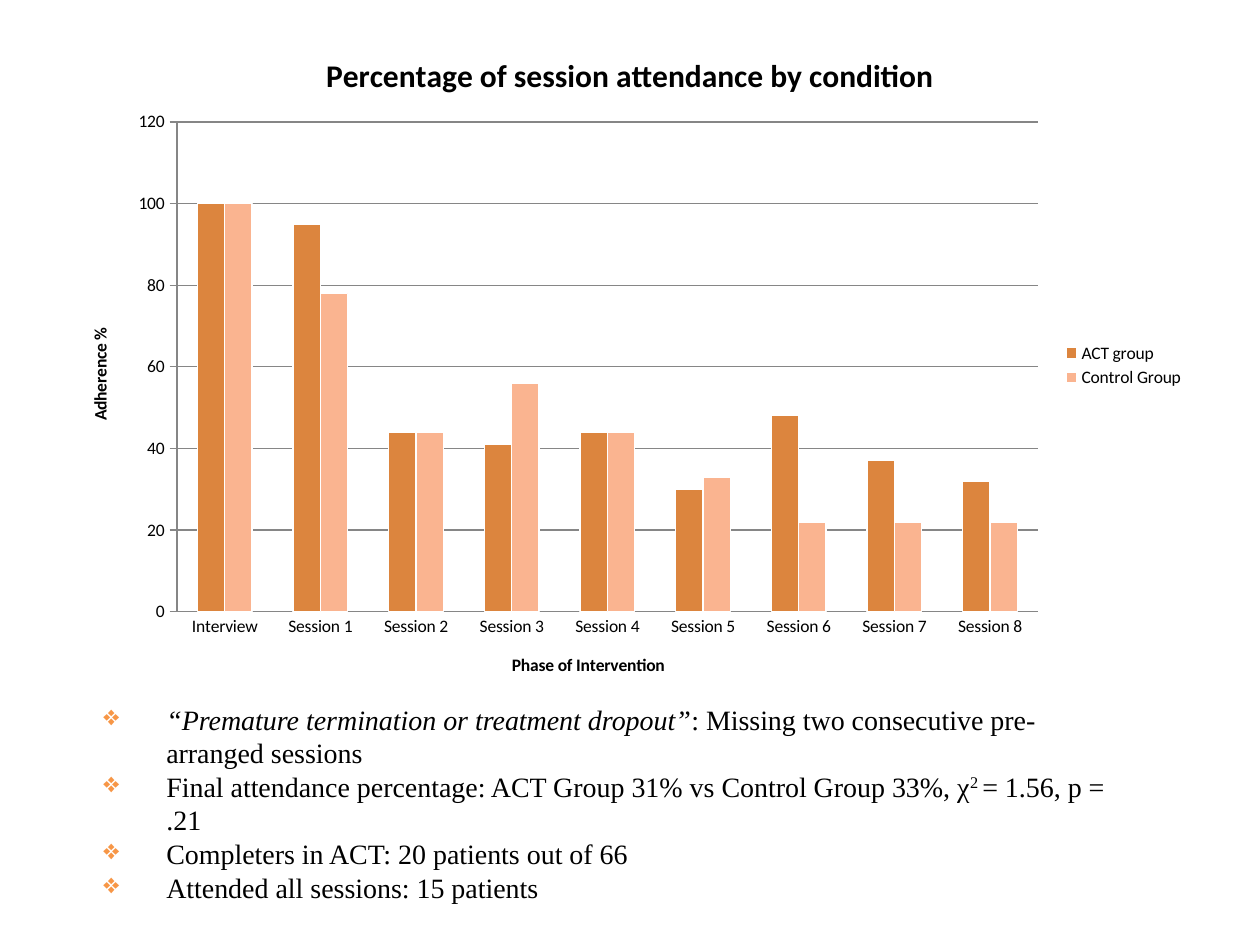
from lxml.etree import SubElement
from pptx import Presentation
from pptx.chart.data import CategoryChartData
from pptx.dml.color import RGBColor
from pptx.enum.chart import XL_CHART_TYPE, XL_LEGEND_POSITION, XL_TICK_MARK
from pptx.oxml import parse_xml
from pptx.oxml.ns import nsdecls, qn
from pptx.util import Pt

SCALE = 914400 / 126  # EMU per px
BLACK = RGBColor(0, 0, 0)
WHITE = RGBColor(255, 255, 255)
GREY = RGBColor(0x86, 0x86, 0x86)
ORANGE = RGBColor(0xDC, 0x85, 0x3E)
PEACH = RGBColor(0xFA, 0xB4, 0x90)
MARK = RGBColor(0xF7, 0x96, 0x46)

PHASES = ["Interview"] + [f"Session {n}" for n in range(1, 9)]
GROUPS = [
    ("ACT group", [100, 95, 44, 41, 44, 30, 48, 37, 32], ORANGE),
    ("Control Group", [100, 78, 44, 56, 44, 33, 22, 22, 22], PEACH),
]
# Each point is a list of (text, style) runs
POINTS = [
    [("“Premature termination or treatment dropout”", "italic"),
     (": Missing two consecutive pre-arranged sessions", "")],
    [("Final attendance percentage: ACT Group 31% vs Control Group 33%, χ", ""),
     ("2 ", "super"), ("= 1.56, p = .21", "")],
    [("Completers in ACT: 20 patients out of 66", "")],
    [("Attended all sessions: 15 patients", "")],
]


def px(*vals):
    return [round(v * SCALE) for v in vals]


class Deck:
    chart_font = "Calibri"
    text_font = "Times New Roman"

    def __init__(self, wide, high):
        self.prs = Presentation()
        self.prs.slide_width, self.prs.slide_height = px(wide, high)
        self.slide = self.prs.slides.add_slide(self.prs.slide_layouts[6])

    def style(self, font, name, size, bold=False):
        font.name, font.size, font.bold = name, Pt(size), bold
        font.color.rgb = BLACK

    def title(self, owner, text, size):
        frame = owner.text_frame
        frame.text = text
        self.style(frame.paragraphs[0].runs[0].font, self.chart_font, size, True)

    def chart(self, box, area, title, labels, cats, groups):
        data = CategoryChartData()
        data.categories = cats
        for name, vals, _ in groups:
            data.add_series(name, vals)
        chart = self.slide.shapes.add_chart(
            XL_CHART_TYPE.COLUMN_CLUSTERED, *px(*box), data).chart
        self.style(chart.font, self.chart_font, 10)
        chart.has_title = True
        self.title(chart.chart_title, title, 18)
        chart.has_legend = True
        chart.legend.position = XL_LEGEND_POSITION.RIGHT
        chart.legend.include_in_layout = False

        # Bars
        plot = chart.plots[0]
        plot.gap_width, plot.overlap = 150, 0
        plot.vary_by_categories = False
        for bars, (_, _, color) in zip(plot.series, groups):
            bars.format.fill.solid()
            bars.format.fill.fore_color.rgb = color
            bars.format.line.color.rgb = WHITE
            bars.format.line.width = Pt(0.75)

        # Axes
        cat, val = chart.category_axis, chart.value_axis
        for axis, label in zip((cat, val), labels):
            axis.has_title = True
            self.title(axis.axis_title, label, 10)
            axis.format.line.color.rgb = GREY
            axis.minor_tick_mark = XL_TICK_MARK.NONE
        cat.major_tick_mark = XL_TICK_MARK.NONE
        val.major_tick_mark = XL_TICK_MARK.OUTSIDE
        val.minimum_scale, val.maximum_scale, val.major_unit = 0, 120, 20
        val.has_major_gridlines = True
        val.major_gridlines.format.line.color.rgb = GREY
        self.place(chart, box, area)

    def place(self, chart, box, area):
        """Fix the inner plot area, given in px on the slide."""
        x, y, w, h = box
        parts = {"x": (area[0] - x) / w, "y": (area[1] - y) / h,
                 "w": area[2] / w, "h": area[3] / h}
        tags = "".join(f'<c:{k}Mode val="edge"/>' for k in "xy")
        tags += "".join(f'<c:{k} val="{v:.4f}"/>' for k, v in parts.items())
        plot = chart.element.find(".//" + qn("c:plotArea"))
        old = plot.find(qn("c:layout"))
        if old is not None:
            plot.remove(old)
        plot.insert(0, parse_xml(
            f'<c:layout {nsdecls("c")}><c:manualLayout>'
            f'<c:layoutTarget val="inner"/>{tags}</c:manualLayout></c:layout>'))

    def bullet(self, para, indent):
        props = para._p.get_or_add_pPr()
        step, = px(indent)
        props.set("marL", str(step))
        props.set("indent", str(-step))
        color = SubElement(props, qn("a:buClr"))
        SubElement(color, qn("a:srgbClr")).set("val", str(MARK))
        SubElement(props, qn("a:buChar")).set("char", "❖")

    def points(self, box, items, size):
        frame = self.slide.shapes.add_textbox(*px(*box)).text_frame
        frame.word_wrap = True
        for i, runs in enumerate(items):
            para = frame.add_paragraph() if i else frame.paragraphs[0]
            self.bullet(para, 63)
            for text, kind in runs:
                run = para.add_run()
                run.text = text
                self.style(run.font, self.text_font, size)
                run.font.italic = kind == "italic"
                if kind == "super":
                    run._r.get_or_add_rPr().set("baseline", "30000")


def main():
    deck = Deck(1260, 945)
    # Attendance chart
    deck.chart((63, 28, 1134, 675), (177, 122, 861, 490),
               "Percentage of session attendance by condition",
               ("Phase of Intervention", "Adherence %"), PHASES, GROUPS)
    # Findings
    deck.points((91, 696, 1043, 255), POINTS, 16)
    deck.prs.save("out.pptx")


if __name__ == "__main__":
    main()
